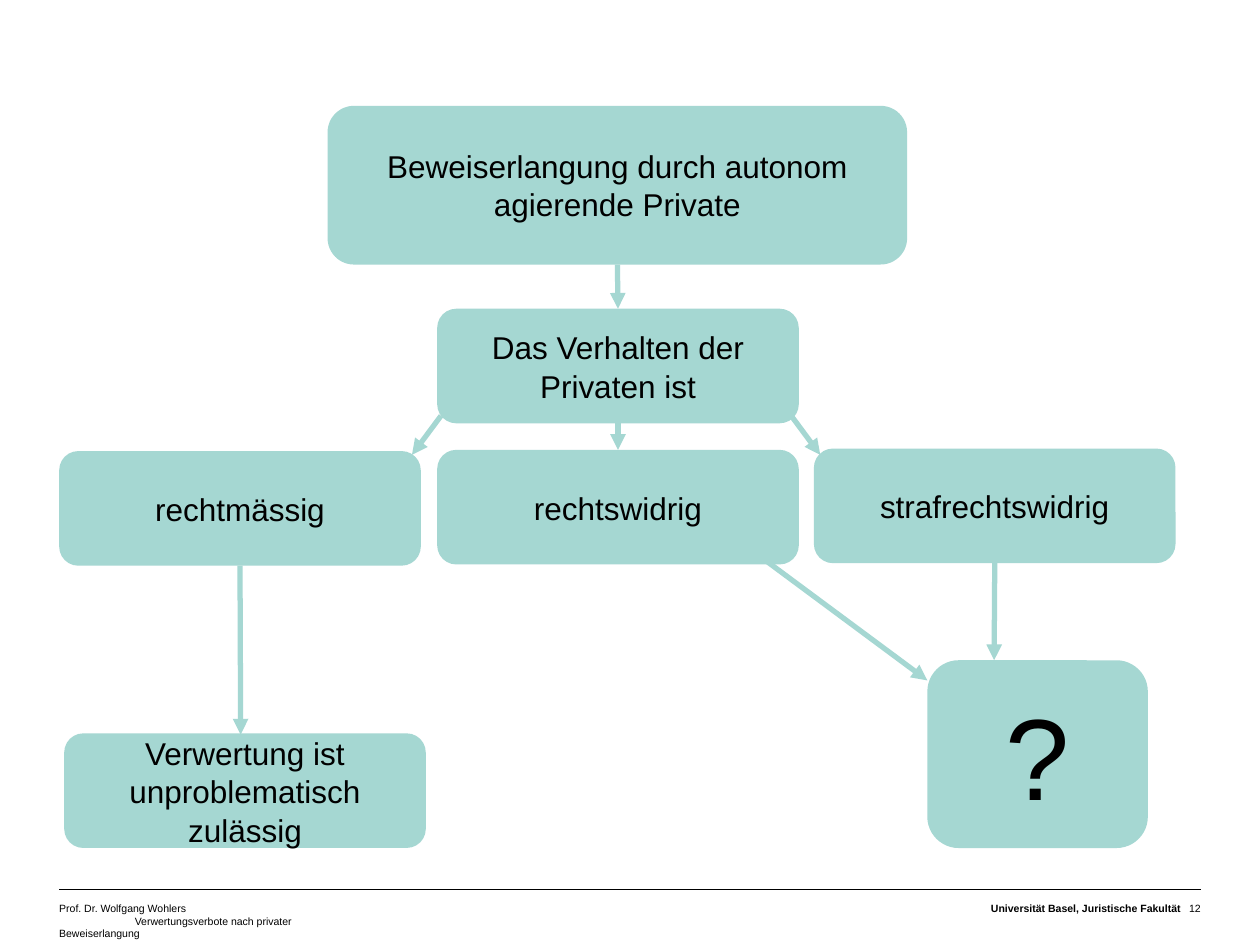
import dataclasses

import lxml.etree
import pptx
import pptx.dml.color
import pptx.enum.shapes
import pptx.enum.text
import pptx.oxml.ns
import pptx.util

Inches = pptx.util.Inches
Pt = pptx.util.Pt
Align = pptx.enum.text.PP_ALIGN
Anchor = pptx.enum.text.MSO_ANCHOR
qn = pptx.oxml.ns.qn
TOP, BOTTOM = 0, 2


@dataclasses.dataclass(frozen=True)
class Theme:
    font: str = "Arial"
    ink: str = "000000"
    mint: str = "A5D7D2"
    body: float = 18
    large: float = 66
    small: float = 6
    lead: float = 22
    rule: float = 0.25
    arrow: float = 3


THEME = Theme()


def color(code):
    return pptx.dml.color.RGBColor.from_string(code)


def write(shape, *lines, size=THEME.body, bold=False, align=Align.CENTER,
          anchor=Anchor.MIDDLE, lead=None, inset=(0.1, 0.05, 0.1, 0.05)):
    """Put each line in its own paragraph; inset is left, top, right, bottom."""
    frame = shape.text_frame
    frame.word_wrap = True
    frame.vertical_anchor = anchor
    (frame.margin_left, frame.margin_top,
     frame.margin_right, frame.margin_bottom) = map(Inches, inset)
    for i, line in enumerate(lines):
        para = frame.add_paragraph() if i else frame.paragraphs[0]
        para.alignment = align
        if lead:
            para.line_spacing = Pt(lead)
        run = para.add_run()
        run.text = line
        run.font.name = THEME.font
        run.font.size = Pt(size)
        run.font.bold = bold
        run.font.color.rgb = color(THEME.ink)
    return frame


def box(slide, text, left, top, width=2.87, height=0.91, **style):
    kind = pptx.enum.shapes.MSO_SHAPE.ROUNDED_RECTANGLE
    shape = slide.shapes.add_shape(
        kind, Inches(left), Inches(top), Inches(width), Inches(height))
    shape.shadow.inherit = False
    shape.fill.solid()
    shape.fill.fore_color.rgb = color(THEME.mint)
    shape.line.fill.background()
    write(shape, text, **style)
    return shape


def line(slide, start, end, tint, width):
    kind = pptx.enum.shapes.MSO_CONNECTOR.STRAIGHT
    link = slide.shapes.add_connector(kind, *map(Inches, start + end))
    link.line.color.rgb = color(tint)
    link.line.width = Pt(width)
    lxml.etree.SubElement(link._element.spPr, qn("a:effectLst"))
    return link


def arrow(slide, start, end, source=None, target=None):
    """Draw an arrow, joined to the bottom of source and the top of target."""
    link = line(slide, start, end, THEME.mint, THEME.arrow)
    stroke = link._element.spPr.find(qn("a:ln"))
    lxml.etree.SubElement(stroke, qn("a:tailEnd"), type="triangle")
    if source is not None:
        link.begin_connect(source, BOTTOM)
    if target is not None:
        link.end_connect(target, TOP)


def note(slide, left, width, *lines, **style):
    area = slide.shapes.add_textbox(
        Inches(left), Inches(7.14), Inches(width), Inches(0.2))
    return write(area, *lines, size=THEME.small, anchor=Anchor.TOP,
                 inset=(0, 0.02, 0, 0), **style)


def footer(slide):
    line(slide, (0.47, 7.06), (9.53, 7.06), THEME.ink, THEME.rule)
    frame = note(slide, 0.47, 2.36, "Prof. Dr. Wolfgang Wohlers",
                 "Verwertungsverbote nach privater Beweiserlangung",
                 align=Align.LEFT)
    props = frame.paragraphs[1]._p.get_or_add_pPr()
    props.set("marL", "0")
    props.set("indent", str(Inches(0.6)))
    note(slide, 5, 4.37, "Universität Basel, Juristische Fakultät",
         bold=True, align=Align.RIGHT)
    note(slide, 9.37, 0.16, "12", align=Align.RIGHT)


def chart(slide):
    lead = THEME.lead
    root = box(slide, "Beweiserlangung durch autonom agierende Private",
               2.6, 0.84, 4.6, 1.26)
    act = box(slide, "Das Verhalten der Privaten ist", 3.47, 2.45, lead=lead)
    legal = box(slide, "rechtmässig", 0.47, 3.58, lead=lead)
    wrong = box(slide, "rechtswidrig", 3.47, 3.57, lead=lead)
    crime = box(slide, "strafrechtswidrig", 6.46, 3.56, lead=lead)
    box(slide, "Verwertung ist unproblematisch zulässig", 0.51, 5.82,
        lead=lead, inset=(0, 0, 0, 0))
    box(slide, "?", 7.36, 5.24, 1.75, 1.49, size=THEME.large)

    arrow(slide, (4.9, 2.1), (4.9, 2.45), root, act)
    arrow(slide, (4.9, 3.36), (4.9, 3.57), act, wrong)
    arrow(slide, (3.5, 3.3), (3.27, 3.61))
    arrow(slide, (6.28, 3.3), (6.51, 3.61))
    arrow(slide, (1.91, 4.49), (1.91, 5.83), legal)
    arrow(slide, (7.89, 4.47), (7.89, 5.24), crime)
    arrow(slide, (5.93, 4.34), (7.36, 5.4))


def main():
    deck = pptx.Presentation()
    deck.slide_width = Inches(10)
    deck.slide_height = Inches(7.5)
    slide = deck.slides.add_slide(deck.slide_layouts[6])
    footer(slide)
    chart(slide)
    deck.save("out.pptx")


if __name__ == "__main__":
    main()
